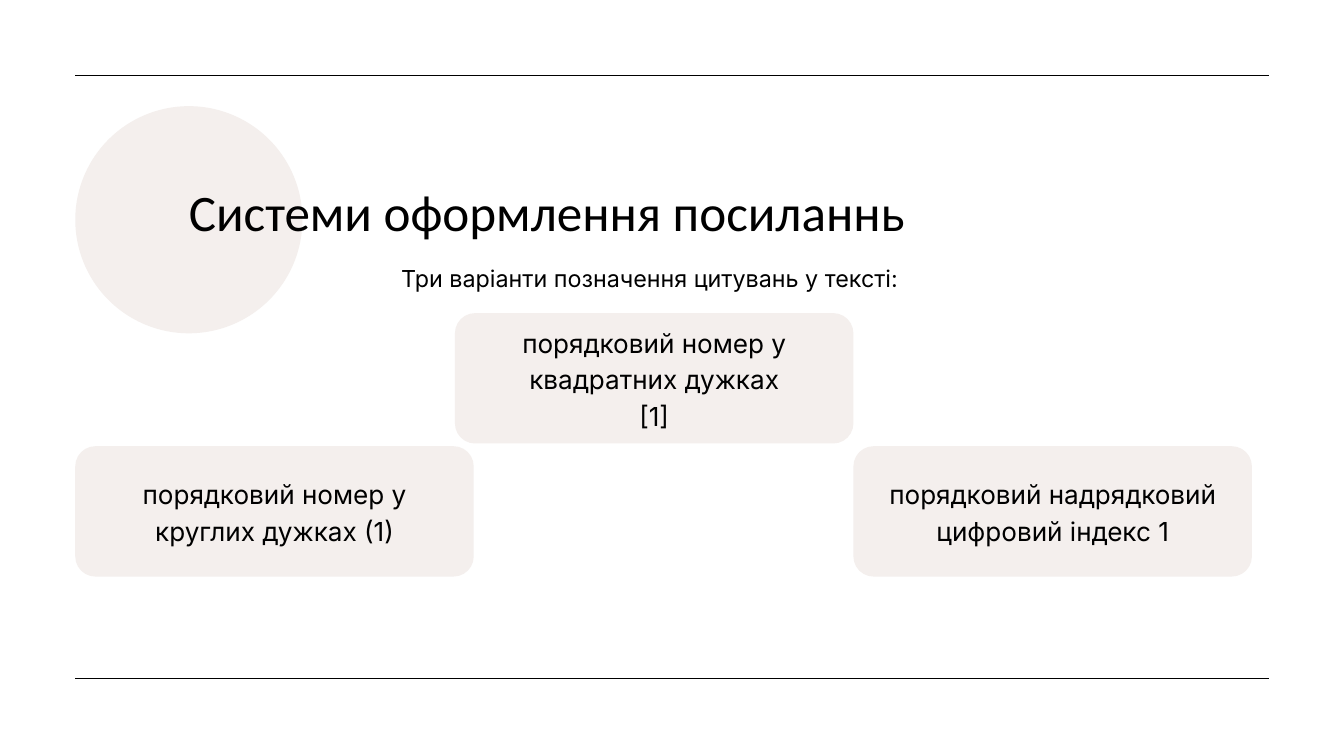
from pptx import Presentation
from pptx.dml.color import RGBColor
from pptx.enum.shapes import MSO_CONNECTOR, MSO_SHAPE
from pptx.enum.text import MSO_ANCHOR, MSO_AUTO_SIZE, PP_ALIGN
from pptx.oxml.ns import qn
from pptx.util import Inches, Pt
from lxml import etree

STRAIGHT = MSO_CONNECTOR.STRAIGHT
OVAL, ROUNDED = MSO_SHAPE.OVAL, MSO_SHAPE.ROUNDED_RECTANGLE
LEFT, CENTER = PP_ALIGN.LEFT, PP_ALIGN.CENTER
TOP = MSO_ANCHOR.TOP
NO_AUTOFIT = MSO_AUTO_SIZE.NONE
TITLE_ONLY = 5

SLIDE_WIDTH, SLIDE_HEIGHT = 20, 11.25
MARGIN = 1.12
CARD_WIDTH, CARD_HEIGHT, CARD_RADIUS = 5.93, 1.94, 0.3
CARD_PADDING = 0.29


def color(hex_string):
    return RGBColor.from_string(hex_string)


def write(frame, text, size=28, font="Inter", ink="000000", align=LEFT, leading=1.4):
    """Fill a text frame; each line of text becomes a paragraph."""
    frame.word_wrap = True
    frame.auto_size = NO_AUTOFIT
    frame.vertical_anchor = TOP
    frame.margin_left = frame.margin_right = 0
    frame.margin_top = frame.margin_bottom = 0
    frame.text = text
    for paragraph in frame.paragraphs:
        paragraph.alignment = align
        paragraph.line_spacing = Pt(round(size * leading, 1))
        paragraph.space_before = Pt(0)
        paragraph.font.size = Pt(size)
        paragraph.font.name = font
        paragraph.font.color.rgb = color(ink)


class SlideBuilder:
    ink = "000000"
    tint = "F4EFED"

    def __init__(self, slide):
        self.slide = slide

    def rule(self, y):
        line = self.slide.shapes.add_connector(
            STRAIGHT, Inches(MARGIN), Inches(y), Inches(SLIDE_WIDTH - MARGIN), Inches(y))
        line.line.color.rgb = color(self.ink)
        line.line.width = Pt(1.5)
        etree.SubElement(line._element.spPr, qn("a:effectLst"))

    def panel(self, preset, left, top, width, height):
        panel = self.slide.shapes.add_shape(
            preset, Inches(left), Inches(top), Inches(width), Inches(height))
        panel.shadow.inherit = False
        panel.fill.solid()
        panel.fill.fore_color.rgb = color(self.tint)
        panel.line.fill.background()
        return panel

    def title(self, text, left, top, width, height):
        title = self.slide.shapes.title
        title.left, title.top = Inches(left), Inches(top)
        title.width, title.height = Inches(width), Inches(height)
        write(title.text_frame, text, size=54.8, font="Calibri", ink=self.ink)
        # Bring the title in front of the circle
        self.slide.shapes._spTree.append(title._element)

    def text(self, text, left, top, width, height, **style):
        box = self.slide.shapes.add_textbox(
            Inches(left), Inches(top), Inches(width), Inches(height))
        write(box.text_frame, text, ink=self.ink, **style)

    def card(self, text, left, top, text_offset, text_height):
        card = self.panel(ROUNDED, left, top, CARD_WIDTH, CARD_HEIGHT)
        card.adjustments[0] = CARD_RADIUS / CARD_HEIGHT
        self.text(text, left + CARD_PADDING, top + text_offset,
                  CARD_WIDTH - 2 * CARD_PADDING, text_height, align=CENTER)


def main():
    deck = Presentation()
    deck.slide_width, deck.slide_height = Inches(SLIDE_WIDTH), Inches(SLIDE_HEIGHT)
    builder = SlideBuilder(deck.slides.add_slide(deck.slide_layouts[TITLE_ONLY]))

    # Frame rules and decorative circle
    for y in (SLIDE_HEIGHT - 1.15, MARGIN):
        builder.rule(y)
    builder.panel(OVAL, MARGIN, 1.58, 3.38, 3.38)

    # Heading
    builder.title("Системи оформлення посиланнь", 2.81, 2.53, 16.06, 1.04)
    builder.text("Три варіанти позначення цитувань у тексті:",
                 5.97, 3.86, 8.07, 0.45, size=25)

    # Citation styles
    citation_styles = [
        ("порядковий номер у круглих дужках (1)", MARGIN, 6.64, 0.4, 1.07),
        ("порядковий номер у квадратних дужках\n[1]", 6.77, 4.66, 0.13, 1.61),
        ("порядковий надрядковий цифровий індекс 1", 12.7, 6.64, 0.4, 1.07),
    ]
    for citation_style in citation_styles:
        builder.card(*citation_style)

    deck.save("out.pptx")


if __name__ == "__main__":
    main()
